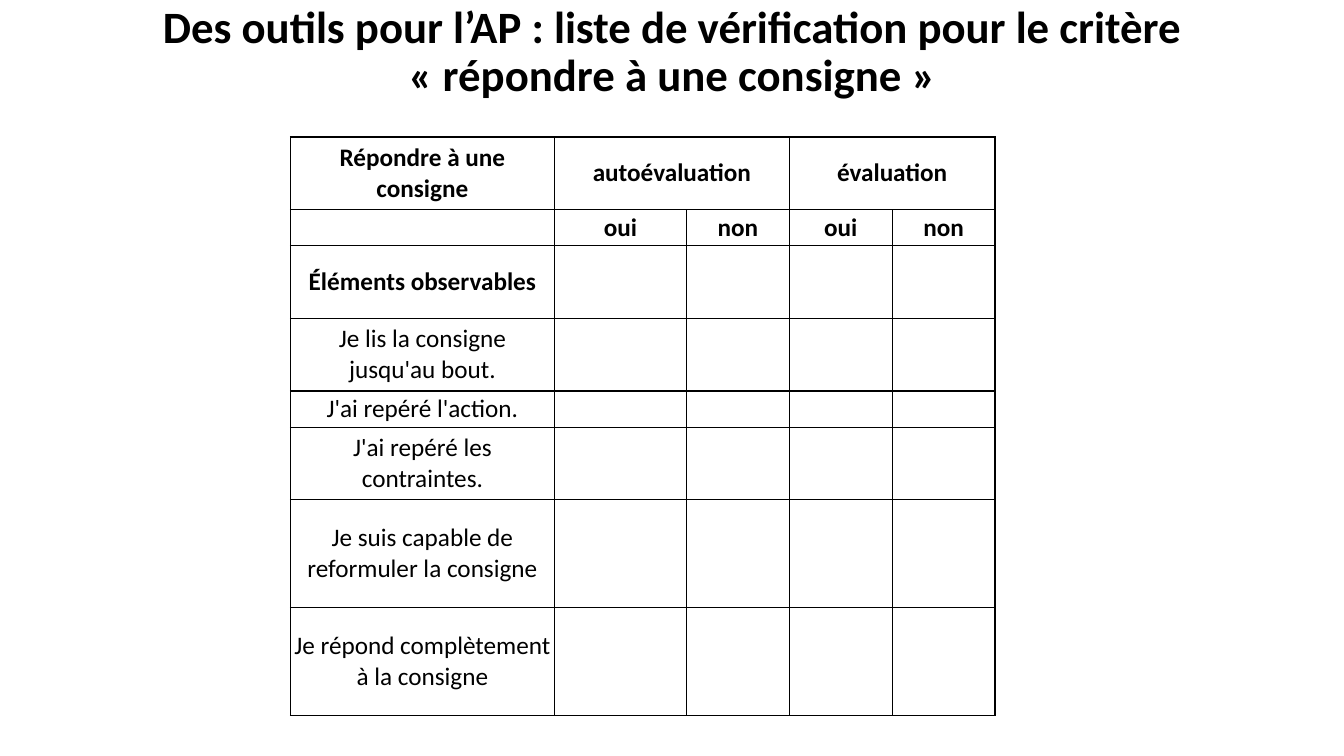
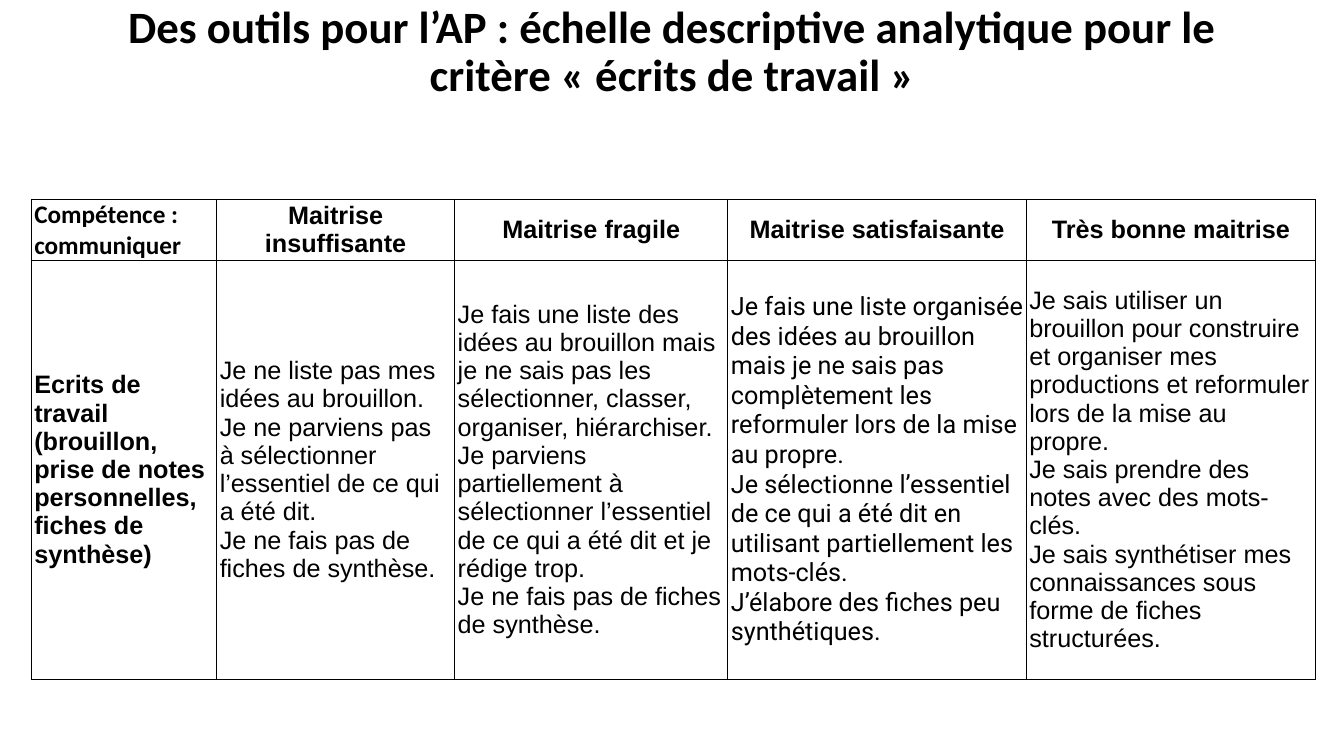
"""Build two slides of assessment tools: a checklist and a descriptive scale."""
from lxml.etree import SubElement
from pptx import Presentation
from pptx.dml.color import RGBColor
from pptx.enum.text import MSO_ANCHOR, PP_ALIGN
from pptx.oxml.ns import qn
from pptx.util import Inches, Pt

BLACK = RGBColor(0x00, 0x00, 0x00)
WHITE = RGBColor(0xFF, 0xFF, 0xFF)


def write(text_frame, text, font="Calibri", size=18, bold=False,
          align=PP_ALIGN.CENTER, line_spacing=None):
    """Write one paragraph for each line of the text."""
    text_frame.text = text
    for paragraph in text_frame.paragraphs:
        paragraph.alignment = align
        paragraph.line_spacing = line_spacing
        for run in paragraph.runs:
            run.font.name = font
            run.font.size = Pt(size)
            run.font.bold = bold
            run.font.color.rgb = BLACK


class Deck:
    """Hold the shared style and the current slide."""

    def __init__(self):
        """Start an empty widescreen presentation."""
        self.presentation = Presentation()
        self.presentation.slide_width = Inches(13.33)
        self.presentation.slide_height = Inches(7.5)
        self.slide = None

    def add_slide(self, title):
        """Add a blank slide with its centred title."""
        self.slide = self.presentation.slides.add_slide(self.presentation.slide_layouts[6])
        box = self.slide.shapes.add_textbox(Inches(0.92), 0, Inches(11.5), Inches(1.05))
        box.text_frame.word_wrap = True
        box.text_frame.vertical_anchor = MSO_ANCHOR.MIDDLE
        write(box.text_frame, title, size=32, bold=True, line_spacing=0.9)

    def add_table(self, left, top, widths, heights):
        """Add an empty white table with black rules."""
        table = self.slide.shapes.add_table(
            len(heights), len(widths), Inches(left), Inches(top),
            Inches(sum(widths)), Inches(sum(heights))).table
        table.first_row = False
        table.horz_banding = False
        for column, width in zip(table.columns, widths):
            column.width = Inches(width)
        for row, height in zip(table.rows, heights):
            row.height = Inches(height)
        for cell in table.iter_cells():
            self.style_cell(cell)
        return table

    def style_cell(self, cell):
        """Set the margins, anchor, borders and fill of a cell."""
        cell.margin_left = cell.margin_right = Inches(0.03)
        cell.margin_top = cell.margin_bottom = 0
        cell.vertical_anchor = MSO_ANCHOR.MIDDLE
        properties = cell._tc.get_or_add_tcPr()
        for side in ("a:lnL", "a:lnR", "a:lnT", "a:lnB"):
            line = SubElement(properties, qn(side), w=str(Pt(1)))
            fill = SubElement(line, qn("a:solidFill"))
            SubElement(fill, qn("a:srgbClr"), val=str(BLACK))
        cell.fill.solid()
        cell.fill.fore_color.rgb = WHITE

    def save(self):
        """Save the presentation."""
        self.presentation.save("out.pptx")


def build_checklist(deck):
    """Build the checklist slide."""
    deck.add_slide("Des outils pour l’AP : liste de vérification pour le critère "
                   "«\u00a0répondre à une consigne\u00a0»".replace("\u00a0", chr(160)))
    table = deck.add_table(2.88, 1.36, [2.62, 1.31, 1.02, 1.02, 1.02],
                           [0.72, 0.36, 0.72, 0.72, 0.36, 0.72, 1.07, 1.07])
    for column, assessor in ((1, "autoévaluation"), (3, "évaluation")):
        table.cell(0, column).merge(table.cell(0, column + 1))
        write(table.cell(0, column).text_frame, assessor, bold=True)
        for offset, answer in enumerate(("oui", "non")):
            write(table.cell(1, column + offset).text_frame, answer, bold=True)
    write(table.cell(0, 0).text_frame, "Répondre à une consigne", bold=True)
    write(table.cell(2, 0).text_frame, "Éléments observables", bold=True)
    criteria = (
        "Je lis la consigne jusqu'au bout.",
        "J'ai repéré l'action.",
        "J'ai repéré les contraintes.",
        "Je suis capable de reformuler la consigne",
        "Je répond complètement à la consigne",
    )
    for row, criterion in enumerate(criteria, start=3):
        write(table.cell(row, 0).text_frame, criterion)


def build_scale(deck):
    """Build the descriptive scale slide."""
    deck.add_slide("Des outils pour l’AP : échelle descriptive analytique pour le "
                   "critère « écrits de travail »")
    table = deck.add_table(0.31, 1.98, [1.84, 2.36, 2.71, 2.96, 2.87], [0.6, 4.16])
    table.cell(0, 0).vertical_anchor = MSO_ANCHOR.BOTTOM
    write(table.cell(0, 0).text_frame, "Compétence : communiquer",
          bold=True, align=PP_ALIGN.LEFT)
    write(table.cell(1, 0).text_frame,
          "Ecrits de travail (brouillon, prise de notes personnelles, fiches de synthèse)",
          font="Arial", bold=True, align=PP_ALIGN.LEFT)
    levels = (
        ("Maitrise insuffisante", "Arial",
         "Je ne liste pas mes idées au brouillon.\n"
         "Je ne parviens pas à sélectionner l’essentiel de ce qui a été dit.\n"
         "Je ne fais pas de fiches de synthèse."),
        ("Maitrise fragile", "Arial",
         "Je fais une liste des idées au brouillon mais je ne sais pas les "
         "sélectionner, classer, organiser, hiérarchiser.\n"
         "Je parviens partiellement à sélectionner l’essentiel de ce qui a été dit "
         "et je rédige trop.\n"
         "Je ne fais pas de fiches de synthèse."),
        ("Maitrise satisfaisante", "Roboto",
         "Je fais une liste organisée des idées au brouillon mais je ne sais pas "
         "complètement les reformuler lors de la mise au propre.\n"
         "Je sélectionne l’essentiel de ce qui a été dit en utilisant partiellement "
         "les mots-clés.\n"
         "J’élabore des fiches peu synthétiques."),
        ("Très bonne maitrise", "Arial",
         "Je sais utiliser un brouillon pour construire et organiser mes productions "
         "et reformuler lors de la mise au propre.\n"
         "Je sais prendre des notes avec des mots-clés.\n"
         "Je sais synthétiser mes connaissances sous forme de fiches structurées."),
    )
    for column, (level, font, description) in enumerate(levels, start=1):
        write(table.cell(0, column).text_frame, level, font="Arial", bold=True)
        write(table.cell(1, column).text_frame, description,
              font=font, align=PP_ALIGN.LEFT)


def main():
    """Build and save the presentation."""
    deck = Deck()
    build_checklist(deck)
    build_scale(deck)
    deck.save()


if __name__ == "__main__":
    main()
